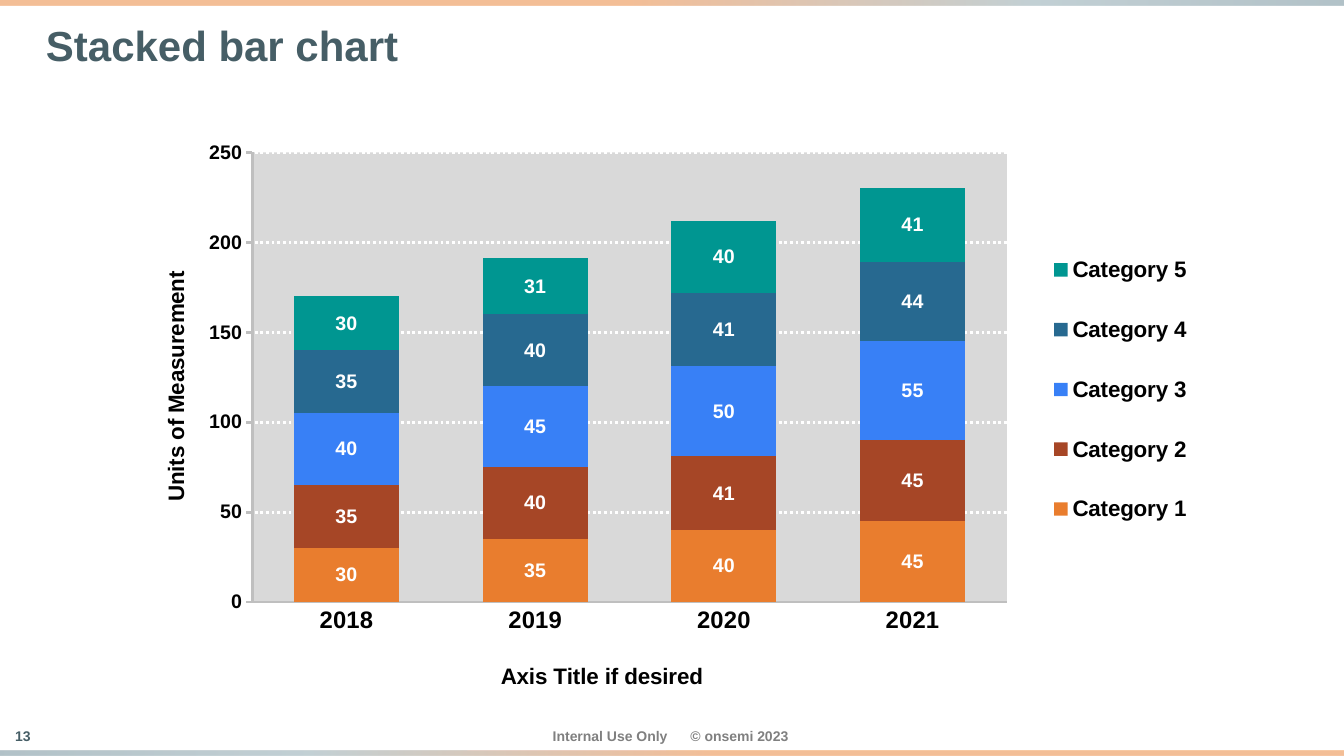
from copy import deepcopy

from lxml import etree
from pptx import Presentation
from pptx.chart.data import CategoryChartData
from pptx.dml.color import RGBColor
from pptx.enum import chart as ch, dml, shapes, text
from pptx.oxml.ns import qn
from pptx.util import Cm, Pt

SLATE = RGBColor(0x46, 0x5E, 0x66)
GRAY = RGBColor(0x80, 0x80, 0x80)
AXIS_GRAY = RGBColor(0xBF, 0xBF, 0xBF)
PLOT_GRAY = RGBColor(0xD9, 0xD9, 0xD9)
BLACK = RGBColor(0, 0, 0)
WHITE = RGBColor(0xFF, 0xFF, 0xFF)
ORANGE = RGBColor(0xE9, 0x7D, 0x2E)
RUST = RGBColor(0xA6, 0x46, 0x26)
BLUE = RGBColor(0x38, 0x80, 0xF6)
NAVY = RGBColor(0x27, 0x69, 0x90)
TEAL = RGBColor(0x00, 0x96, 0x91)
MIST = RGBColor(0x87, 0xA3, 0xAC)
STEEL = RGBColor(0x64, 0x86, 0x92)


def style(font, size, color):
    for name, value in {"name": "Arial", "size": Pt(size), "bold": True}.items():
        setattr(font, name, value)
    font.color.rgb = color


def set_layout(parent, index, **places):
    """Give a chart part a manual layout, as fractions of the chart."""
    for old in parent.findall(qn("c:layout")):
        parent.remove(old)
    layout = etree.Element(qn("c:layout"))
    manual = etree.SubElement(layout, qn("c:manualLayout"))
    for tag, value in places.items():
        etree.SubElement(manual, qn(f"c:{tag}")).set("val", str(value))
    parent.insert(index, layout)


prs = Presentation()
prs.slide_width, prs.slide_height = Cm(33.87), Cm(19.05)
s = prs.slides.add_slide(prs.slide_layouts[6])

# Gradient bars along the top and bottom edges
for top, angle in ((18.92, 180), (0, 0)):
    sp = s.shapes.add_shape(shapes.MSO_SHAPE.RECTANGLE, 0, Cm(top), prs.slide_width, Cm(0.13))
    sp.shadow.inherit = False
    sp.line.fill.background()
    sp.fill.gradient()
    sp.fill.gradient_angle = angle
    stop_list = sp._element.spPr.find(qn("a:gradFill")).find(qn("a:gsLst"))
    stop_list.append(deepcopy(stop_list[-1]))
    for stop, position, color in zip(sp.fill.gradient_stops, (0.47, 0.77, 1), (ORANGE, MIST, STEEL)):
        stop.position = position
        stop.color.rgb = color
    for rgb in stop_list.iter(qn("a:srgbClr")):
        etree.SubElement(rgb, qn("a:alpha")).set("val", "50000")

# Title, slide number and footer
for words, left, top, width, height, inset, size, color in (
    ("Stacked bar chart", 0.91, 0.41, 32.03, 1.42, 0.25, 30, SLATE),
    ("13", 0.38, 18.34, 0.6, 0.43, 0, 10, SLATE),
    ("Internal Use Only\t© onsemi 2023", 13.93, 18.34, 6.4, 0.43, 0, 10, GRAY),
):
    tf = s.shapes.add_textbox(Cm(left), Cm(top), Cm(width), Cm(height)).text_frame
    for name, value in {
        "margin_left": Cm(inset), "margin_right": Cm(inset), "margin_top": 0, "margin_bottom": 0,
        "vertical_anchor": text.MSO_ANCHOR.MIDDLE, "word_wrap": True,
    }.items():
        setattr(tf, name, value)
    p = tf.paragraphs[0]
    p.text = words
    if "\t" in words:
        tabs = etree.SubElement(p._p.get_or_add_pPr(), qn("a:tabLst"))
        tab = etree.SubElement(tabs, qn("a:tab"))
        tab.set("pos", str(Cm(3.47)))
        tab.set("algn", "l")
    style(p.runs[0].font, size, color)

# Chart
series_rows = (
    ("Category 1", (30, 35, 40, 45), ORANGE),
    ("Category 2", (35, 40, 41, 45), RUST),
    ("Category 3", (40, 45, 50, 55), BLUE),
    ("Category 4", (35, 40, 41, 44), NAVY),
    ("Category 5", (30, 31, 40, 41), TEAL),
)
data = CategoryChartData()
data.categories = ["2018", "2019", "2020", "2021"]
for name, values, color in series_rows:
    data.add_series(name, values)
chart = s.shapes.add_chart(
    ch.XL_CHART_TYPE.COLUMN_STACKED, Cm(3.23), Cm(3.28), Cm(29.49), Cm(14.33), data
).chart
chart.has_title = False
style(chart.font, 16, BLACK)

plot = chart.plots[0]
plot.gap_width, plot.overlap, plot.vary_by_categories = 80, 100, False
for series, (name, values, color) in zip(plot.series, series_rows):
    series.format.fill.solid()
    series.format.fill.fore_color.rgb = color
    labels = series.data_labels
    labels.show_value = True
    labels.position = ch.XL_LABEL_POSITION.CENTER
    style(labels.font, 14, WHITE)

for axis, title, size, tick, rotation, x, y in (
    (chart.category_axis, "Axis Title if desired", 17, ch.XL_TICK_MARK.NONE, 0, 0.315, 0.928),
    (chart.value_axis, "Units of Measurement", 14, ch.XL_TICK_MARK.OUTSIDE, -5400000, 0.025, 0.241),
):
    axis.major_tick_mark = tick
    axis.minor_tick_mark = ch.XL_TICK_MARK.NONE
    axis.format.line.color.rgb = AXIS_GRAY
    axis.format.line.width = Pt(2)
    style(axis.tick_labels.font, size, BLACK)
    tf = axis.axis_title.text_frame
    tf.text = title
    style(tf.paragraphs[0].runs[0].font, 16, BLACK)
    title_xml = axis.axis_title._element
    title_xml.find(".//" + qn("a:bodyPr")).set("rot", str(rotation))
    set_layout(title_xml, 1, xMode="edge", yMode="edge", x=x, y=y)

value_axis = chart.value_axis
value_axis.minimum_scale, value_axis.maximum_scale, value_axis.major_unit = 0, 250, 50
grid = value_axis.major_gridlines.format.line
grid.color.rgb = WHITE
grid.width = Pt(2)
grid.dash_style = dml.MSO_LINE.ROUND_DOT

chart.has_legend = True
legend = chart.legend
legend.position = ch.XL_LEGEND_POSITION.RIGHT
legend.include_in_layout = False
style(legend.font, 16, BLACK)
set_layout(legend._element, 1, xMode="edge", yMode="edge", x=0.773, y=0.162, w=0.15, h=0.588)

plot_area = chart._chartSpace.chart.plotArea
set_layout(plot_area, 0, layoutTarget="inner", xMode="edge", yMode="edge",
           x=0.106, y=0.039, w=0.645, h=0.791)
plot_fill = etree.SubElement(etree.SubElement(plot_area, qn("c:spPr")), qn("a:solidFill"))
etree.SubElement(plot_fill, qn("a:srgbClr")).set("val", str(PLOT_GRAY))

prs.save("out.pptx")
